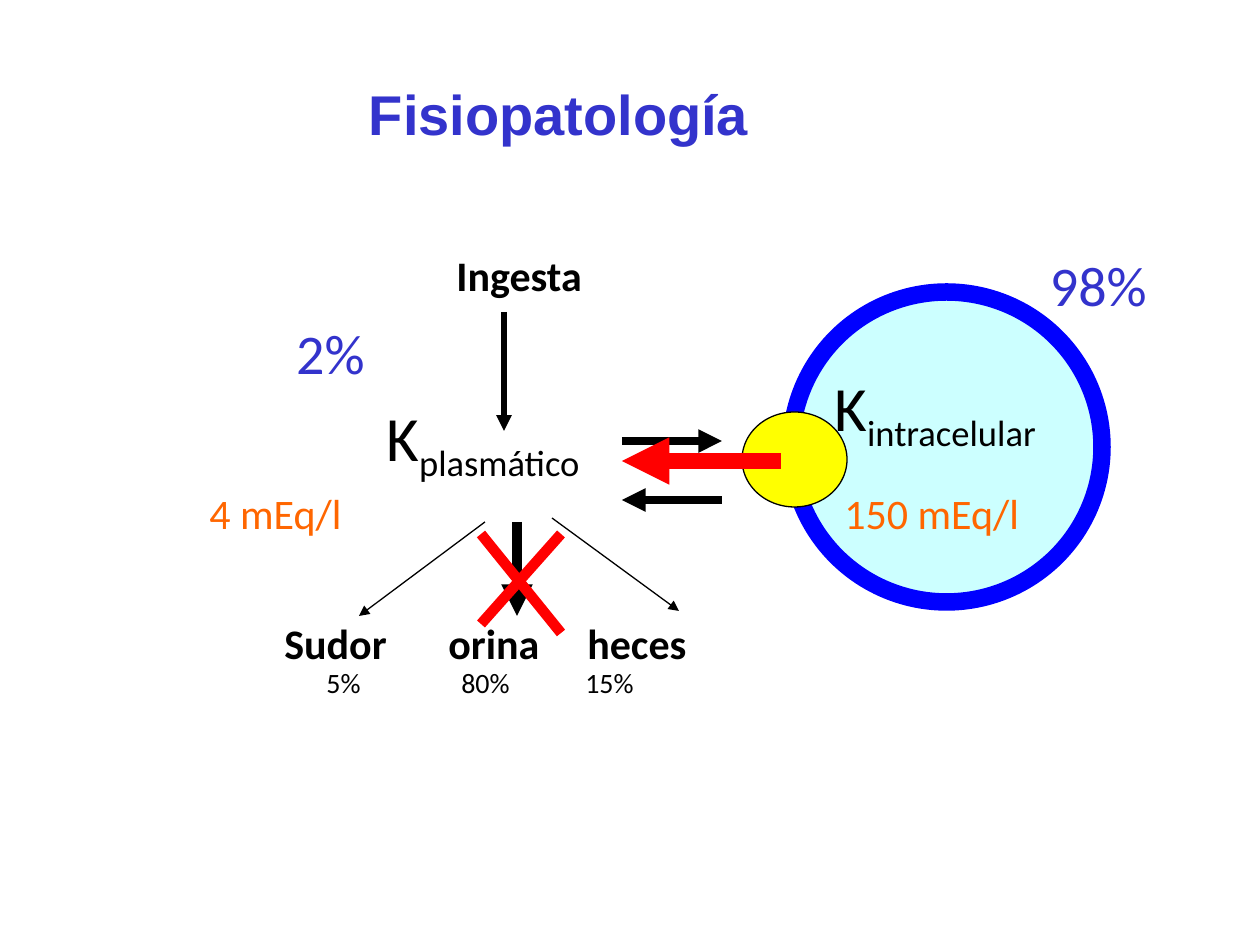
from dataclasses import dataclass

from lxml.etree import SubElement
from pptx import Presentation
from pptx.dml.color import RGBColor
from pptx.enum.shapes import MSO_CONNECTOR, MSO_SHAPE
from pptx.enum.text import MSO_ANCHOR, PP_ALIGN
from pptx.oxml.ns import qn
from pptx.slide import Slide
from pptx.util import Emu, Pt

EMU_PER_PX = 914400 / 126
BLACK = RGBColor(0x00, 0x00, 0x00)
INDIGO = RGBColor(0x33, 0x33, 0xCC)
ORANGE = RGBColor(0xFF, 0x66, 0x00)
RED = RGBColor(0xFF, 0x00, 0x00)
BLUE = RGBColor(0x00, 0x00, 0xFF)
PALE_CYAN = RGBColor(0xCC, 0xFF, 0xFF)
YELLOW = RGBColor(0xFF, 0xFF, 0x00)


@dataclass
class Label:
    text: str
    left: int
    top: int
    width: int
    height: int
    size: int
    color: RGBColor = BLACK
    bold: bool = False
    centered: bool = False
    font: str = "Calibri"
    subscript: str = ""
    anchor: MSO_ANCHOR = MSO_ANCHOR.TOP
    line_spacing: float = 1.0


@dataclass
class Line:
    start: tuple[int, int]
    end: tuple[int, int]
    weight: float
    color: RGBColor = BLACK
    arrow: bool = True


@dataclass
class Ellipse:
    left: int
    top: int
    width: int
    height: int
    fill: RGBColor
    outline: RGBColor
    weight: float


def px(length: int) -> Emu:
    return Emu(round(length * EMU_PER_PX))


def draw_label(page: Slide, label: Label) -> None:
    box = page.shapes.add_textbox(
        px(label.left), px(label.top), px(label.width), px(label.height)
    )
    frame = box.text_frame
    frame.word_wrap = True
    frame.vertical_anchor = label.anchor
    para = frame.paragraphs[0]
    para.alignment = PP_ALIGN.CENTER if label.centered else PP_ALIGN.LEFT
    para.line_spacing = label.line_spacing
    para.font.name = label.font
    para.font.size = Pt(label.size)
    para.font.bold = label.bold
    para.font.color.rgb = label.color
    para.add_run().text = label.text
    if label.subscript:
        span = para.add_run()
        span.text = label.subscript
        span._r.get_or_add_rPr().set("baseline", "-25000")


def draw_line(page: Slide, line: Line) -> None:
    connector = page.shapes.add_connector(
        MSO_CONNECTOR.STRAIGHT, *map(px, line.start + line.end)
    )
    connector.line.color.rgb = line.color
    connector.line.width = Pt(line.weight)
    if line.arrow:
        SubElement(connector.line._get_or_add_ln(), qn("a:tailEnd"), type="triangle")
    SubElement(connector._element.spPr, qn("a:effectLst"))


def draw_ellipse(page: Slide, ellipse: Ellipse) -> None:
    shape = page.shapes.add_shape(
        MSO_SHAPE.OVAL,
        px(ellipse.left), px(ellipse.top), px(ellipse.width), px(ellipse.height),
    )
    shape.shadow.inherit = False
    shape.fill.solid()
    shape.fill.fore_color.rgb = ellipse.fill
    shape.line.color.rgb = ellipse.outline
    shape.line.width = Pt(ellipse.weight)


TITLE = Label("Fisiopatología", 16, 62, 1086, 110, 32, INDIGO, bold=True, centered=True,
              font="Arial", anchor=MSO_ANCHOR.MIDDLE, line_spacing=0.9)

LOSSES = [
    Label("Sudor", 272, 611, 140, 64, 24, bold=True),
    Label("orina", 436, 611, 130, 64, 24, bold=True),
    Label("heces", 575, 611, 140, 64, 24, bold=True),
    Label("5%", 314, 659, 80, 47, 16),
    Label("80%", 449, 659, 90, 47, 16),
    Label("15%", 573, 659, 90, 47, 16),
]

PLASMA = [
    Label("Ingesta", 444, 243, 170, 63, 24, bold=True),
    Label("K", 374, 392, 315, 88, 36, subscript="plasmático"),
]

LOSS_ARROWS = [
    Line((517, 522), (517, 616), 6),
    Line((485, 522), (359, 616), 0.75),
    Line((552, 518), (679, 611), 0.75),
]

INTAKE_ARROW = Line((504, 312), (504, 431), 3)

CELL = Ellipse(791, 292, 311, 310, PALE_CYAN, BLUE, 10)
CHANNEL = Ellipse(742, 412, 105, 95, YELLOW, BLACK, 0.75)

EXCHANGE_ARROWS = [
    Line((622, 441), (722, 441), 4.5),
    Line((722, 500), (622, 500), 4.5),
]

CONCENTRATIONS = [
    Label("K", 822, 362, 315, 88, 36, subscript="intracelular"),
    Label("150 mEq/l", 832, 481, 220, 64, 24, ORANGE),
    Label("4 mEq/l", 197, 481, 175, 64, 24, ORANGE),
    Label("98%", 1029, 244, 139, 81, 32, INDIGO, centered=True),
    Label("2%", 275, 312, 111, 81, 32, INDIGO, centered=True),
]

BLOCKED_EXCRETION = [
    Line((481, 534), (561, 633), 6, RED, arrow=False),
    Line((481, 624), (561, 534), 6, RED, arrow=False),
]

CELL_OUTFLOW = Line((781, 461), (622, 461), 9, RED)


def main() -> None:
    deck = Presentation()
    deck.slide_width, deck.slide_height = px(1260), px(945)
    page = deck.slides.add_slide(deck.slide_layouts[6])

    for label in [TITLE, *LOSSES, *PLASMA]:
        draw_label(page, label)
    for arrow in [*LOSS_ARROWS, INTAKE_ARROW]:
        draw_line(page, arrow)
    for ellipse in [CELL, CHANNEL]:
        draw_ellipse(page, ellipse)
    for arrow in EXCHANGE_ARROWS:
        draw_line(page, arrow)
    for label in CONCENTRATIONS:
        draw_label(page, label)
    for line in [*BLOCKED_EXCRETION, CELL_OUTFLOW]:
        draw_line(page, line)

    deck.save("out.pptx")


if __name__ == "__main__":
    main()
